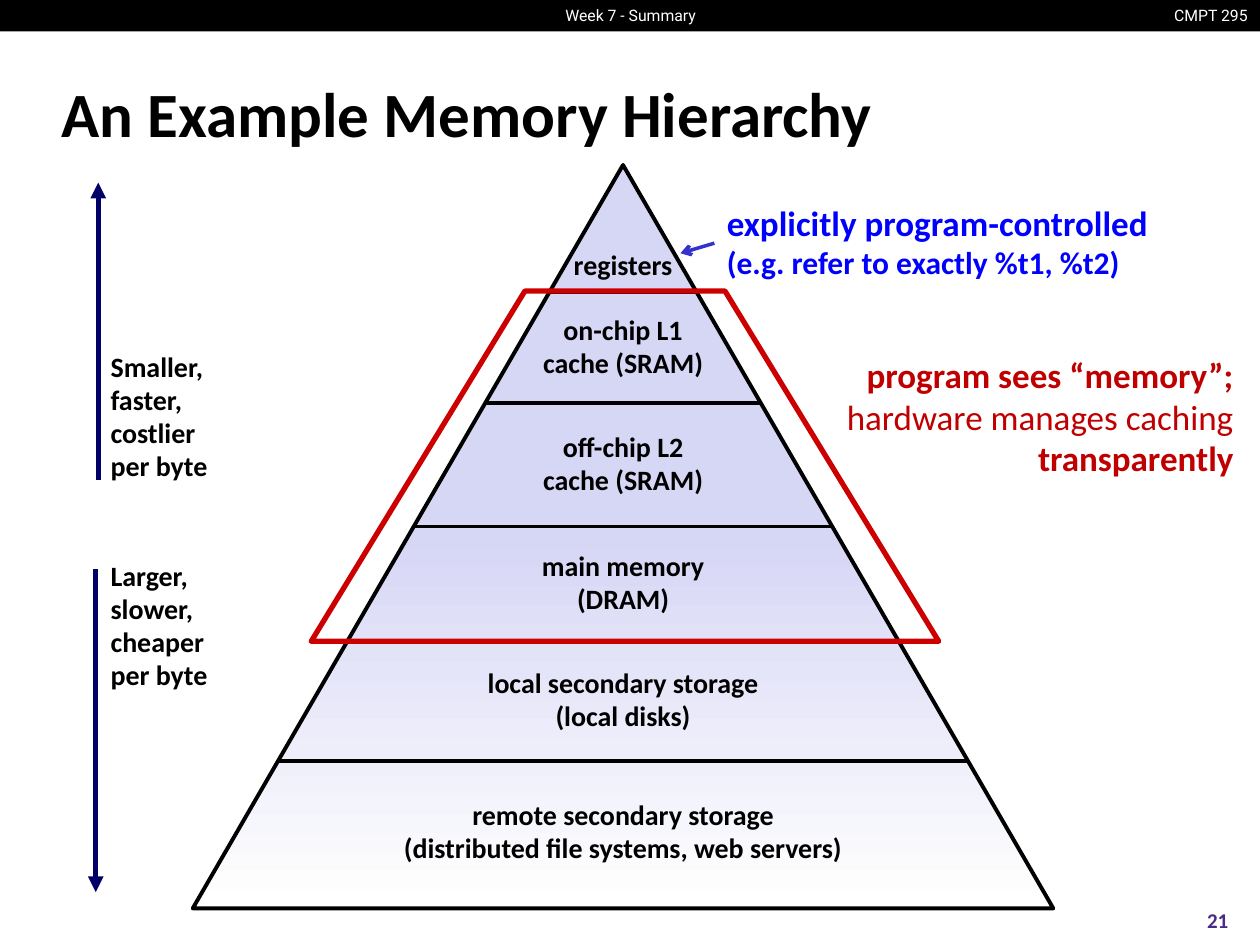
from lxml import etree
from pptx import Presentation
from pptx import util as u
from pptx.dml.color import RGBColor
from pptx.enum import shapes, text
from pptx.oxml import ns

BLACK = RGBColor(0x00, 0x00, 0x00)
WHITE = RGBColor(0xFF, 0xFF, 0xFF)
LAVENDER = RGBColor(0xD6, 0xD6, 0xF5)
NAVY = RGBColor(0x00, 0x00, 0x66)
BLUE = RGBColor(0x00, 0x00, 0xFF)
ARROW_BLUE = RGBColor(0x33, 0x33, 0xCC)
RED = RGBColor(0xCC, 0x00, 0x00)
DARK_RED = RGBColor(0xC0, 0x00, 0x00)
PURPLE = RGBColor(0x4B, 0x2A, 0x85)

LEFT, CENTER, RIGHT = text.PP_ALIGN.LEFT, text.PP_ALIGN.CENTER, text.PP_ALIGN.RIGHT

PYRAMID = (1.53, 1.31, 6.83, 5.9)
DIVIDERS = [2.32, 3.2, 4.18, 5.09, 6.04]
LEVEL_WIDTH = 3.72
LEVELS = [  # top, height, lines
    (1.92, 0.37, ["registers"]),
    (2.44, 0.63, ["on-chip L1", "cache (SRAM)"]),
    (3.37, 0.63, ["off-chip L2", "cache (SRAM)"]),
    (4.31, 0.63, ["main memory", "(DRAM)"]),
    (5.24, 0.63, ["local secondary storage", "(local disks)"]),
    (6.29, 0.63, ["remote secondary storage", "(distributed file systems, web servers)"]),
]
TRENDS = [  # text top, arrow start, arrow end, lines
    (2.73, (0.78, 3.81), (0.78, 1.45), ["Smaller,", "faster,", "costlier", "per byte"]),
    (4.39, (0.76, 4.52), (0.76, 7.08), ["Larger,", "slower,", "cheaper", "per byte"]),
]
REGISTER_NOTE = [[("explicitly program-controlled ", {}),
                  ("(e.g. refer to exactly %t1, %t2)", {"size": 18})]]
MEMORY_NOTE = ["program sees “memory”;",
               [("hardware manages caching", {"bold": False})],
               "transparently"]


def add_text(slide, box, paragraphs, size=16, color=BLACK, bold=True, font="Calibri",
             align=LEFT, anchor=text.MSO_ANCHOR.MIDDLE, spacing=0.98, wrap=True):
    """Each paragraph is a string or a list of (text, format changes) runs."""
    frame = slide.shapes.add_textbox(*map(u.Inches, box)).text_frame
    frame.word_wrap = wrap
    frame.vertical_anchor = anchor
    for index, content in enumerate(paragraphs):
        paragraph = frame.paragraphs[0] if index == 0 else frame.add_paragraph()
        paragraph.alignment = align
        paragraph.line_spacing = spacing
        runs = [(content, {})] if isinstance(content, str) else content
        for words, changes in runs:
            run = paragraph.add_run()
            run.text = words
            run.font.name = font
            run.font.size = u.Pt(changes.get("size", size))
            run.font.bold = changes.get("bold", bold)
            run.font.color.rgb = color


def add_line(slide, start, end, color=BLACK, width=2, head=None):
    line = slide.shapes.add_connector(
        shapes.MSO_CONNECTOR.STRAIGHT, *map(u.Inches, (*start, *end)))
    line.line.color.rgb = color
    line.line.width = u.Pt(width)
    if head:
        etree.SubElement(line.line._get_or_add_ln(), ns.qn("a:tailEnd"), type=head)
    etree.SubElement(line._element.spPr, ns.qn("a:effectLst"))


def add_outline(slide, kind, box, color, width):
    shape = slide.shapes.add_shape(kind, *map(u.Inches, box))
    shape.shadow.inherit = False
    shape.fill.background()
    shape.line.color.rgb = color
    shape.line.width = u.Pt(width)
    return shape


def add_header(slide):
    bar = add_outline(slide, shapes.MSO_SHAPE.RECTANGLE, (0, 0, 10, 0.25), BLACK, 0)
    bar.fill.solid()
    bar.fill.fore_color.rgb = BLACK
    bar.line.fill.background()
    for box, words, align in [((9.19, 0, 0.81, 0.25), "CMPT 295", RIGHT),
                              ((4.3, 0, 1.41, 0.25), "Week 7 - Summary", CENTER)]:
        add_text(slide, box, [words], size=9, color=WHITE, bold=False, font="Roboto",
                 align=align, anchor=text.MSO_ANCHOR.TOP, spacing=1, wrap=False)


def add_pyramid(slide):
    left, top, width, height = PYRAMID
    center = left + width / 2
    pyramid = add_outline(slide, shapes.MSO_SHAPE.ISOSCELES_TRIANGLE, PYRAMID, BLACK, 2.25)
    pyramid.fill.gradient()
    pyramid.fill.gradient_angle = 270
    for stop, position, color in zip(pyramid.fill.gradient_stops, (0.49, 1), (LAVENDER, WHITE)):
        stop.position = position
        stop.color.rgb = color
    for y in DIVIDERS:
        half = (y - top) / height * width / 2
        add_line(slide, (center - half, y), (center + half, y))
    for level_top, level_height, lines in LEVELS:
        add_text(slide, (center - LEVEL_WIDTH / 2, level_top, LEVEL_WIDTH, level_height),
                 lines, align=CENTER, wrap=False)


def main():
    presentation = Presentation()
    presentation.slide_width = u.Inches(10)
    presentation.slide_height = u.Inches(7.5)
    slide = presentation.slides.add_slide(presentation.slide_layouts[6])

    add_header(slide)
    add_text(slide, (0.39, 0.48, 9.19, 0.83), ["An Example Memory Hierarchy"],
             size=36, spacing=1)
    add_text(slide, (9.33, 7.1, 0.67, 0.4), ["21"], size=12, color=PURPLE,
             align=CENTER, spacing=1)
    add_pyramid(slide)
    for top, start, end, lines in TRENDS:
        add_line(slide, start, end, color=NAVY, width=3, head="triangle")
        add_text(slide, (0.78, top, 1, 1.16), lines, wrap=False)

    memory_outline = add_outline(slide, shapes.MSO_SHAPE.TRAPEZOID,
                                 (2.47, 2.31, 4.98, 2.78), RED, 3)
    memory_outline.adjustments[0] = 0.61
    add_text(slide, (5.67, 1.56, 3.96, 0.73), REGISTER_NOTE, size=20, color=BLUE)
    add_text(slide, (5.93, 2.77, 3.96, 1.09), MEMORY_NOTE, size=20, color=DARK_RED, align=RIGHT)
    add_line(slide, (5.67, 1.93), (5.4, 2.01), color=ARROW_BLUE, head="arrow")
    presentation.save("out.pptx")


if __name__ == "__main__":
    main()
